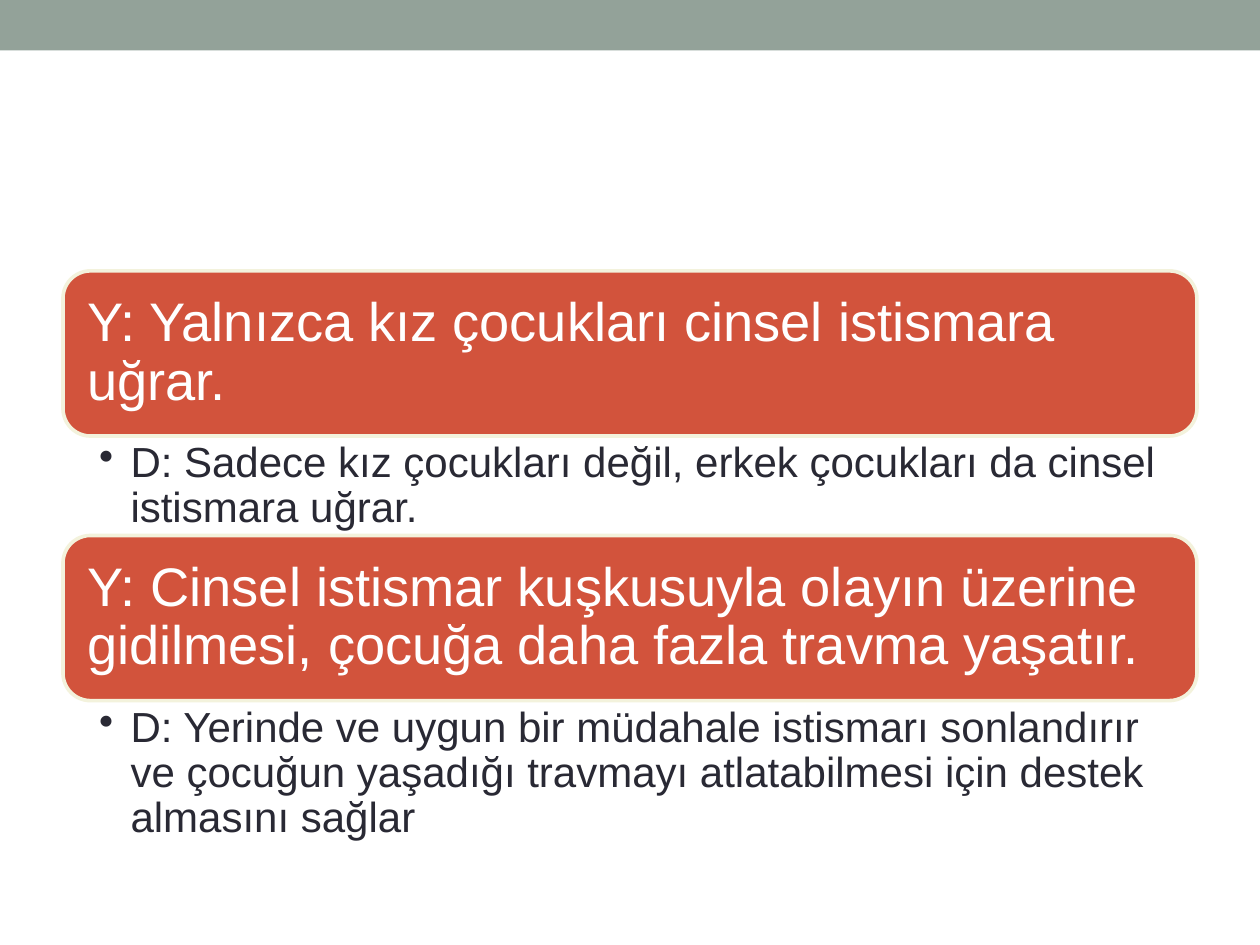
from dataclasses import dataclass

from lxml import etree
from pptx import Presentation
from pptx import util as u
from pptx.dml.color import RGBColor
from pptx.enum import shapes, text
from pptx.oxml import ns


@dataclass(frozen=True)
class Theme:
    font: str = "Arial"
    band: str = "93A299"
    card: str = "D2533C"
    edge: str = "F3F2DC"
    light: str = "FFFFFF"
    dark: str = "292934"
    claim_size: float = 31
    fact_size: float = 24


THEME = Theme()
LEFT, TOP, WIDTH = 36, 154.8, 648
CLAIM_HEIGHT = 94.4
MYTHS = [
    ("Y: Yalnızca kız çocukları cinsel istismara uğrar.",
     "D: Sadece kız çocukları değil, erkek çocukları da cinsel istismara uğrar.",
     56.8),
    ("Y: Cinsel istismar kuşkusuyla olayın üzerine gidilmesi, çocuğa daha fazla travma yaşatır.",
     "D: Yerinde ve uygun bir müdahale istismarı sonlandırır ve çocuğun yaşadığı travmayı "
     "atlatabilmesi için destek almasını sağlar",
     80.6),
]


def add_box(s, kind, x, y, w, h, fill, line=None):
    sp = s.shapes.add_shape(kind, u.Pt(x), u.Pt(y), u.Pt(w), u.Pt(h))
    sp.shadow.inherit = False
    sp.fill.solid()
    sp.fill.fore_color.rgb = RGBColor.from_string(fill)
    if line:
        sp.line.color.rgb = RGBColor.from_string(line)
        sp.line.width = u.Pt(2.08)
    else:
        sp.line.fill.background()
    return sp


def add_bullet(p, indent):
    pPr = p._p.get_or_add_pPr()
    pPr.set("marL", str(u.Pt(indent)))
    pPr.set("indent", str(-u.Pt(indent)))
    etree.SubElement(pPr, ns.qn("a:buChar")).set("char", "•")


def write(sp, words, *, size, color, insets, anchor, bullet_indent=None):
    tf = sp.text_frame
    tf.word_wrap = True
    tf.vertical_anchor = anchor
    tf.margin_left, tf.margin_top, tf.margin_right, tf.margin_bottom = map(u.Pt, insets)
    p = tf.paragraphs[0]
    p.alignment = text.PP_ALIGN.LEFT
    p.line_spacing = 0.9
    if bullet_indent:
        add_bullet(p, bullet_indent)
    r = p.add_run()
    r.text = words
    r.font.name = THEME.font
    r.font.size = u.Pt(size)
    r.font.color.rgb = RGBColor.from_string(color)


def add_claim(s, words, y):
    sp = add_box(s, shapes.MSO_SHAPE.ROUNDED_RECTANGLE, LEFT, y, WIDTH, CLAIM_HEIGHT,
                 THEME.card, THEME.edge)
    write(sp, words, size=THEME.claim_size, color=THEME.light,
          insets=(9.3, 9.3, 9.3, 9.3), anchor=text.MSO_ANCHOR.MIDDLE)


def add_fact(s, words, y, height):
    sp = s.shapes.add_textbox(u.Pt(LEFT), u.Pt(y), u.Pt(WIDTH), u.Pt(height))
    write(sp, words, size=THEME.fact_size, color=THEME.dark,
          insets=(20.6, 3, 17, 3), anchor=text.MSO_ANCHOR.TOP, bullet_indent=18)


def main():
    prs = Presentation()
    prs.slide_width, prs.slide_height = u.Pt(720), u.Pt(540)
    s = prs.slides.add_slide(prs.slide_layouts[6])
    add_box(s, shapes.MSO_SHAPE.RECTANGLE, 0, 0, 720, 28.8, THEME.band)
    y = TOP
    for claim, fact, fact_height in MYTHS:
        add_claim(s, claim, y)
        add_fact(s, fact, y + CLAIM_HEIGHT, fact_height)
        y += CLAIM_HEIGHT + fact_height
    prs.save("out.pptx")


if __name__ == "__main__":
    main()
